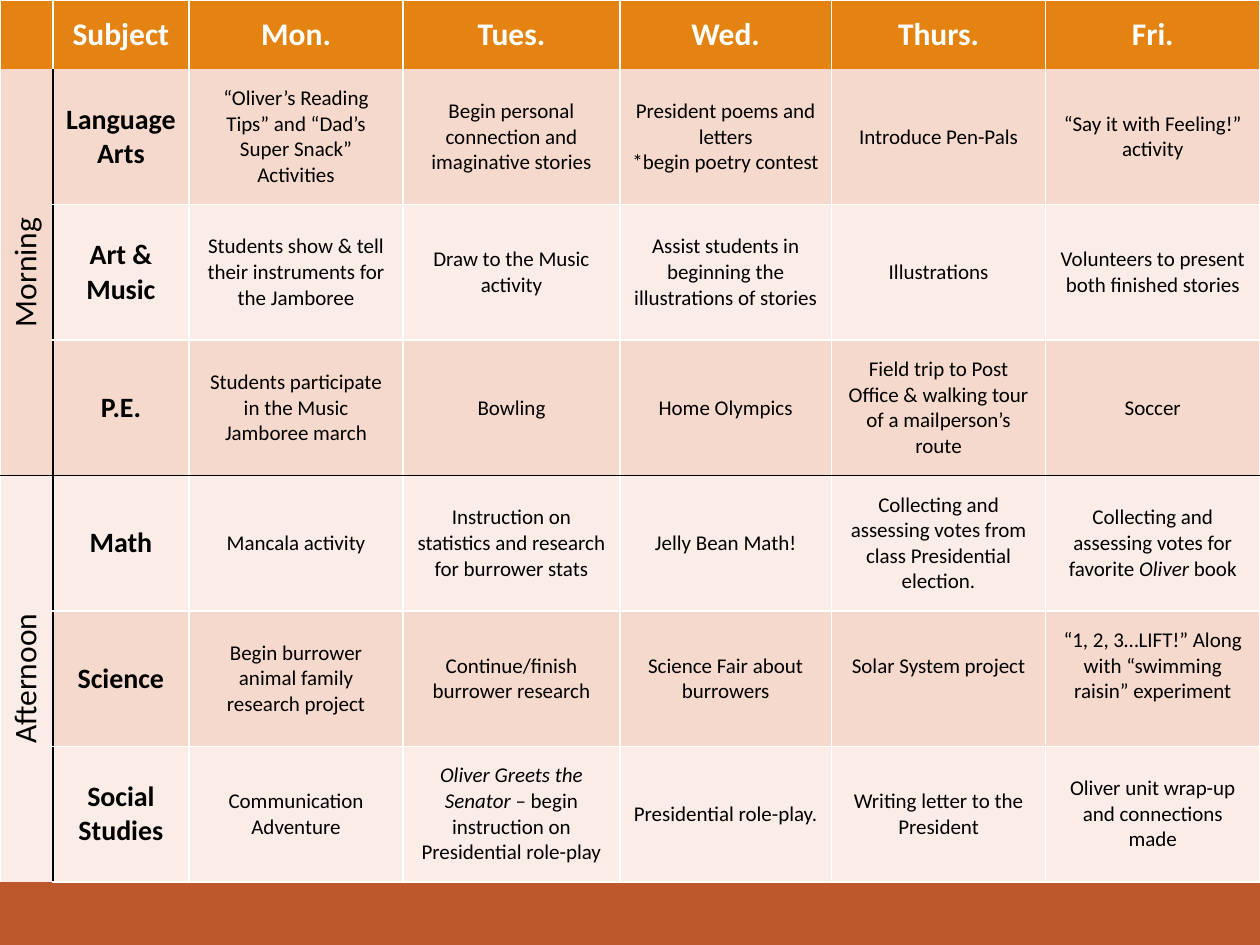
from lxml.etree import SubElement
from pptx import Presentation
from pptx.dml.color import RGBColor
from pptx.enum.shapes import MSO_SHAPE
from pptx.enum.text import MSO_ANCHOR, PP_ALIGN
from pptx.oxml.ns import qn
from pptx.util import Inches, Pt

COLORS = {
    "header": "E48312",
    "footer": "BD582C",
    "dark_band": "F5D9CC",
    "light_band": "FAEDE7",
    "white": "FFFFFF",
    "black": "000000",
}
FONT = "Calibri"
COLUMN_SHARES = [0.042, 0.108, 0.17, 0.172, 0.168, 0.17, 0.17]
HEADER_SHARE = 0.55 / 7
TABLE_SHARE = 14 / 15

DAYS = ["", "Subject", "Mon.", "Tues.", "Wed.", "Thurs.", "Fri."]
SESSIONS = ["Morning", "Afternoon"]
SUBJECTS_PER_SESSION = 3
# Underscores enclose italic words.
LESSONS = [
    ["Language Arts", "“Oliver’s Reading Tips” and “Dad’s Super Snack” Activities",
     "Begin personal connection and imaginative stories",
     "President poems and letters\n*begin poetry contest",
     "Introduce Pen-Pals", "“Say it with Feeling!” activity"],
    ["Art & Music", "Students show & tell their instruments for the Jamboree",
     "Draw to the Music activity",
     "Assist students in beginning the illustrations of stories",
     "Illustrations", "Volunteers to present both finished stories"],
    ["P.E.", "Students participate in the Music Jamboree march", "Bowling",
     "Home Olympics",
     "Field trip to Post Office & walking tour of a mailperson’s route", "Soccer"],
    ["Math", "Mancala activity",
     "Instruction on statistics and research for burrower stats",
     "Jelly Bean Math!",
     "Collecting and assessing votes from class Presidential election.",
     "Collecting and assessing votes for favorite _Oliver_ book"],
    ["Science", "Begin burrower animal family research project",
     "Continue/finish burrower research", "Science Fair about burrowers",
     "Solar System project",
     "“1, 2, 3…LIFT!” Along with “swimming raisin” experiment"],
    ["Social Studies", "Communication Adventure",
     "_Oliver Greets the Senator_ – begin instruction on Presidential role-play",
     "Presidential role-play.", "Writing letter to the President",
     "Oliver unit wrap-up and connections made"],
]
RAISED_CELLS = {(5, 5), (5, 6)}


def rgb(name):
    return RGBColor.from_string(COLORS[name])


def write_text(cell, text, size, bold=False, color="black"):
    cell.vertical_anchor = MSO_ANCHOR.MIDDLE
    frame = cell.text_frame
    for index, line in enumerate(text.split("\n")):
        paragraph = frame.paragraphs[0] if index == 0 else frame.add_paragraph()
        paragraph.alignment = PP_ALIGN.CENTER
        for part_index, part in enumerate(line.split("_")):
            if not part:
                continue
            run = paragraph.add_run()
            run.text = part
            font = run.font
            font.name, font.size, font.bold = FONT, Pt(size), bold
            font.italic = part_index % 2 == 1
            font.color.rgb = rgb(color)


def border_colors(row, column):
    """Colour of the left, right, top and bottom border; None for no line."""
    last_in_session = row % SUBJECTS_PER_SESSION == 0
    first_in_session = row % SUBJECTS_PER_SESSION == 1
    left = "black" if row and column == 1 else "white"
    right = "black" if row and column == 0 else "white"
    top = "black" if row == SUBJECTS_PER_SESSION + 1 else "white"
    bottom = "black" if row == SUBJECTS_PER_SESSION else "white"
    if row == 1 or (row and column == 0 and not first_in_session):
        top = None
    if row == 0 or (column == 0 and not last_in_session):
        bottom = None
    return left, right, top, bottom


def style_cell(cell, row, column, fill):
    properties = cell._tc.get_or_add_tcPr()
    for side, color in zip("LRTB", border_colors(row, column)):
        line = SubElement(properties, qn(f"a:ln{side}"), w=str(Pt(1)))
        if color is None:
            SubElement(line, qn("a:noFill"))
        else:
            solid = SubElement(line, qn("a:solidFill"))
            SubElement(solid, qn("a:srgbClr"), val=COLORS[color])
    cell.fill.solid()
    cell.fill.fore_color.rgb = rgb(fill)


def band(row):
    return "dark_band" if row % 2 else "light_band"


def add_timetable(slide, left, top, width, height):
    row_count = len(LESSONS) + 1
    table = slide.shapes.add_table(
        row_count, len(DAYS), left, top, width, height).table
    table.first_row = table.horz_banding = False
    for column, share in zip(table.columns, COLUMN_SHARES):
        column.width = round(width * share)
    header_height = round(height * HEADER_SHARE)
    for index, row in enumerate(table.rows):
        row.height = (round((height - header_height) / len(LESSONS))
                      if index else header_height)

    for row in range(row_count):
        for column in range(len(DAYS)):
            first_row = row - (row - 1) % SUBJECTS_PER_SESSION
            fill = band(first_row if column == 0 else row) if row else "header"
            style_cell(table.cell(row, column), row, column, fill)

    for column, day in enumerate(DAYS):
        write_text(table.cell(0, column), day, 18, True, "white")
    for row, lessons in enumerate(LESSONS, 1):
        for column, lesson in enumerate(lessons, 1):
            is_subject = column == 1
            write_text(table.cell(row, column), lesson,
                       16 if is_subject else 12, is_subject)
    for row, column in RAISED_CELLS:
        table.cell(row, column).margin_bottom = Inches(0.25)

    for index, session in enumerate(SESSIONS):
        first_row = 1 + index * SUBJECTS_PER_SESSION
        cell = table.cell(first_row, 0)
        cell.merge(table.cell(first_row + SUBJECTS_PER_SESSION - 1, 0))
        write_text(cell, session, 18)
        cell._tc.get_or_add_tcPr().set("vert", "vert270")


def add_footer(slide, left, top, width, height):
    footer = slide.shapes.add_shape(MSO_SHAPE.RECTANGLE, left, top, width, height)
    footer.shadow.inherit = False
    footer.fill.solid()
    footer.fill.fore_color.rgb = rgb("footer")
    footer.line.fill.background()


def main():
    presentation = Presentation()
    presentation.slide_width = width = Inches(10)
    presentation.slide_height = height = Inches(7.5)
    slide = presentation.slides.add_slide(presentation.slide_layouts[6])
    table_height = round(height * TABLE_SHARE)
    add_footer(slide, 0, table_height, width, height - table_height)
    add_timetable(slide, 0, 0, width, table_height)
    presentation.save("out.pptx")


if __name__ == "__main__":
    main()
